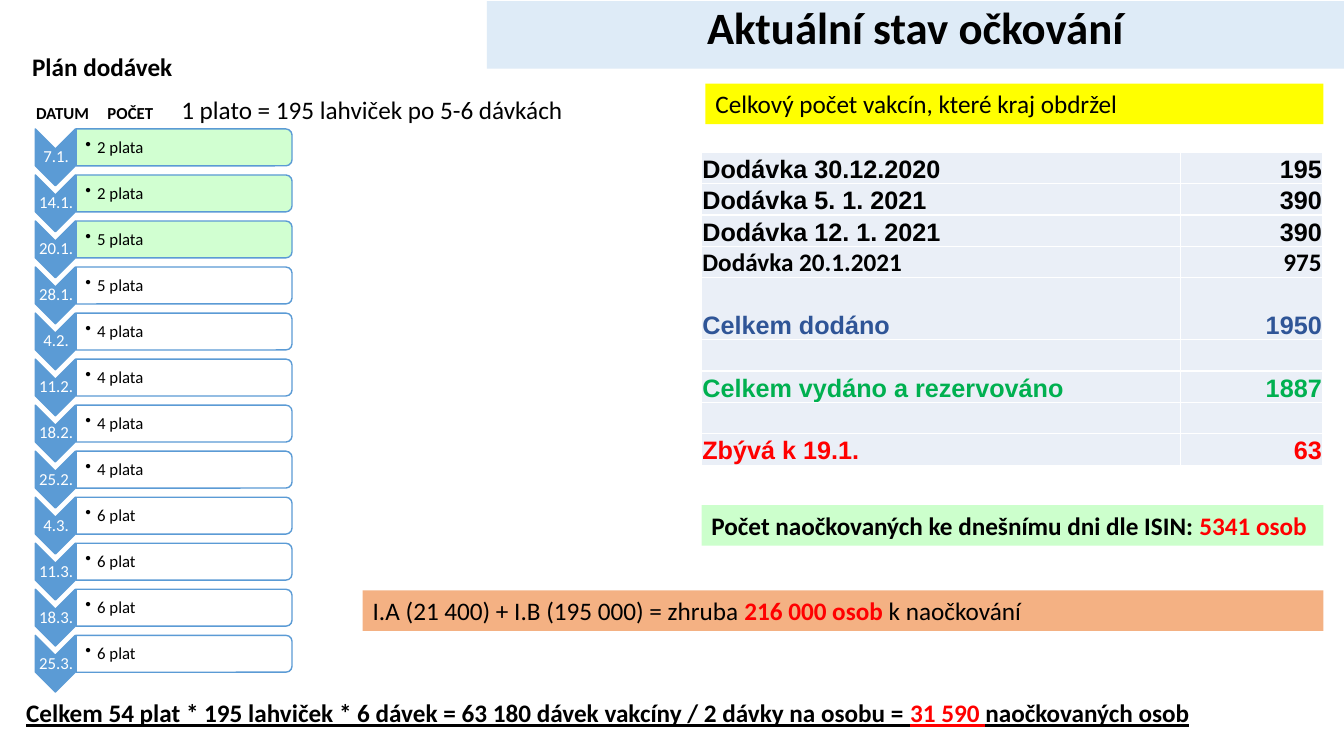
from lxml import etree
from pptx import Presentation
from pptx import util as u
from pptx.dml.color import RGBColor
from pptx.enum import shapes, text
from pptx.oxml import ns

BLACK, WHITE, RED, BLUE, GREEN = "000000", "FFFFFF", "FF0000", "5B9BD5", "CCFFCC"
LEFT, CENTER, RIGHT = text.PP_ALIGN.LEFT, text.PP_ALIGN.CENTER, text.PP_ALIGN.RIGHT

DELIVERIES = [
    ("7.1.", "2 plata", GREEN), ("14.1.", "2 plata", GREEN), ("20.1.", "5 plata", GREEN),
    ("28.1.", "5 plata", WHITE), ("4.2.", "4 plata", WHITE), ("11.2.", "4 plata", WHITE),
    ("18.2.", "4 plata", WHITE), ("25.2.", "4 plata", WHITE), ("4.3.", "6 plat", WHITE),
    ("11.3.", "6 plat", WHITE), ("18.3.", "6 plat", WHITE), ("25.3.", "6 plat", WHITE),
]
STOCK = [
    ("Dodávka 30.12.2020", "195", "Arial", BLACK, 0.79),
    ("Dodávka 5. 1. 2021", "390", "Arial", BLACK, 0.79),
    ("Dodávka 12. 1. 2021", "390", "Arial", BLACK, 0.79),
    ("Dodávka 20.1.2021", "975", "Calibri", BLACK, 0.79),
    ("Celkem dodáno", "1950", "Arial", "2F5597", 1.56),
    ("", "", "Arial", BLACK, 0.79),
    ("Celkem vydáno a rezervováno", "1887", "Arial", "00B050", 0.79),
    ("", "", "Arial", BLACK, 0.79),
    ("Zbývá k 19.1.", "63", "Arial", RED, 0.79),
]
STOCK_COLUMNS = (12.07, 3.58)
LABELS = [
    ((0.56, 1.17, 4.19, 1.02), 18, None, [("Plán dodávek", BLACK, "b")]),
    ((0.66, 2.46, 2, 0.76), 12, None, [("DATUM", BLACK, "b")]),
    ((2.46, 2.46, 2, 0.76), 12, None, [("POČET", BLACK, "b")]),
    ((0.41, 17.45, 31.95, 1.8), 18, None, [
        ("Celkem 54 plat * 195 lahviček * 6 dávek = 63 180 dávek vakcíny / 2 dávky na osobu = ",
         BLACK, "bu"),
        ("31 590 ", RED, "bu"), ("naočkovaných osob", BLACK, "bu")]),
    ((17.78, 2.11, 15.57, 1.02), 18, "FFFF00",
     [("Celkový počet vakcín, které kraj obdržel", BLACK, "")]),
    ((17.68, 12.73, 15.67, 1.02), 18, GREEN, [
        ("Počet naočkovaných ke dnešnímu dni dle ISIN: ", BLACK, "b"), ("5341 osob", RED, "b")]),
    ((9.14, 14.88, 24.21, 1.02), 18, "F4B183", [
        ("I.A (21 400) + I.B (195 000) = zhruba ", BLACK, ""),
        ("216 000 osob ", RED, "b"), ("k naočkování", BLACK, "")]),
    ((4.32, 2.26, 10.39, 1.02), 18, None,
     [("1 plato = 195 lahviček po 5-6 dávkách", BLACK, "")]),
]

prs = Presentation()
prs.slide_width, prs.slide_height = u.Cm(33.87), u.Cm(19.05)
s = prs.slides.add_slide(prs.slide_layouts[6])


def paint(fill, color):
    fill.solid()
    fill.fore_color.rgb = RGBColor.from_string(color)


def write(p, runs, size, font="Calibri", align=LEFT):
    p.alignment = align
    for words, color, style in runs:
        r = p.add_run()
        r.text = words
        r.font.size, r.font.name = u.Pt(size), font
        r.font.bold, r.font.underline = "b" in style, "u" in style
        r.font.color.rgb = RGBColor.from_string(color)


def add_shape(kind, box, color, outline=None, turn=0):
    sp = s.shapes.add_shape(kind, *map(u.Cm, box))
    sp.shadow.inherit = False
    sp.rotation = turn
    paint(sp.fill, color)
    if outline:
        paint(sp.line.fill, outline)
        sp.line.width = u.Pt(1)
    else:
        sp.line.fill.background()
    return sp


def add_text(box, runs, size, fill=None, align=LEFT, insets=None, spacing=None):
    if fill:
        sp = add_shape(shapes.MSO_SHAPE.RECTANGLE, box, fill)
    else:
        sp = s.shapes.add_textbox(*map(u.Cm, box))
    tf = sp.text_frame
    tf.word_wrap = True
    tf.vertical_anchor = text.MSO_ANCHOR.TOP
    if insets:
        tf.vertical_anchor = text.MSO_ANCHOR.MIDDLE
        tf.margin_left, tf.margin_top, tf.margin_right, tf.margin_bottom = map(u.Cm, insets)
    p = tf.paragraphs[0]
    p.line_spacing = spacing
    write(p, runs, size, align=align)
    return p


def add_bullet(p):
    pPr = p._p.get_or_add_pPr()
    pPr.set("marL", str(u.Cm(0.3)))
    pPr.set("indent", str(-u.Cm(0.3)))
    etree.SubElement(pPr, ns.qn("a:buChar")).set("char", "•")


def add_upright(kind, x, y, w, h, color):
    box = (x + (w - h) / 2, y + (h - w) / 2, h, w)
    return add_shape(kind, box, color, BLUE, 90)


def add_delivery(y, date, amount, color):
    add_upright(shapes.MSO_SHAPE.CHEVRON, 0.89, y, 1.01, 1.43, BLUE)
    add_text((0.91, y + 0.5, 1.01, 0.43), [(date, WHITE, "")], 12, align=CENTER,
             insets=(0.02, 0.02, 0.02, 0.02), spacing=0.9)
    bar = add_upright(shapes.MSO_SHAPE.ROUND_2_SAME_RECTANGLE, 1.92, y, 5.44, 0.93, color)
    tint = bar.fill._xPr.find(ns.qn("a:solidFill"))[0]
    etree.SubElement(tint, ns.qn("a:alpha")).set("val", "90000")
    add_bullet(add_text((1.92, y + 0.05, 5.38, 0.84), [(amount, BLACK, "")], 12,
                        insets=(0.23, 0.02, 0.02, 0.02), spacing=0.9))


def add_borders(cell):
    tcPr = cell._tc.get_or_add_tcPr()
    for side in ("lnL", "lnR", "lnT", "lnB"):
        ln = etree.SubElement(tcPr, ns.qn("a:" + side), w=str(u.Pt(1)))
        solid = etree.SubElement(ln, ns.qn("a:solidFill"))
        etree.SubElement(solid, ns.qn("a:srgbClr"), val=WHITE)


def add_stock_table():
    height = sum(row[-1] for row in STOCK)
    table = s.shapes.add_table(len(STOCK), 2, u.Cm(17.68), u.Cm(3.84),
                               u.Cm(sum(STOCK_COLUMNS)), u.Cm(height)).table
    table.first_row = table.horz_banding = False
    for column, width in zip(table.columns, STOCK_COLUMNS):
        column.width = u.Cm(width)
    for i, (label, count, font, color, row_height) in enumerate(STOCK):
        table.rows[i].height = u.Cm(row_height)
        for j, (words, align) in enumerate(((label, LEFT), (count, RIGHT))):
            cell = table.cell(i, j)
            cell.margin_left = cell.margin_right = cell.margin_top = u.Cm(0.02)
            cell.margin_bottom = 0
            cell.vertical_anchor = text.MSO_ANCHOR.BOTTOM
            add_borders(cell)
            paint(cell.fill, "EAEFF7")
            if words:
                write(cell.text_frame.paragraphs[0], [(words, color, "b")], 18, font, align)


add_text((12.27, 0.03, 21.6, 1.7), [("Aktuální stav očkování", BLACK, "b")], 32,
         fill="DEEBF7", align=CENTER, spacing=0.9)
for i, delivery in enumerate(DELIVERIES):
    add_delivery(3.25 + 1.16 * i, *delivery)
add_stock_table()
for box, size, fill, runs in LABELS:
    add_text(box, runs, size, fill)

prs.save("out.pptx")
